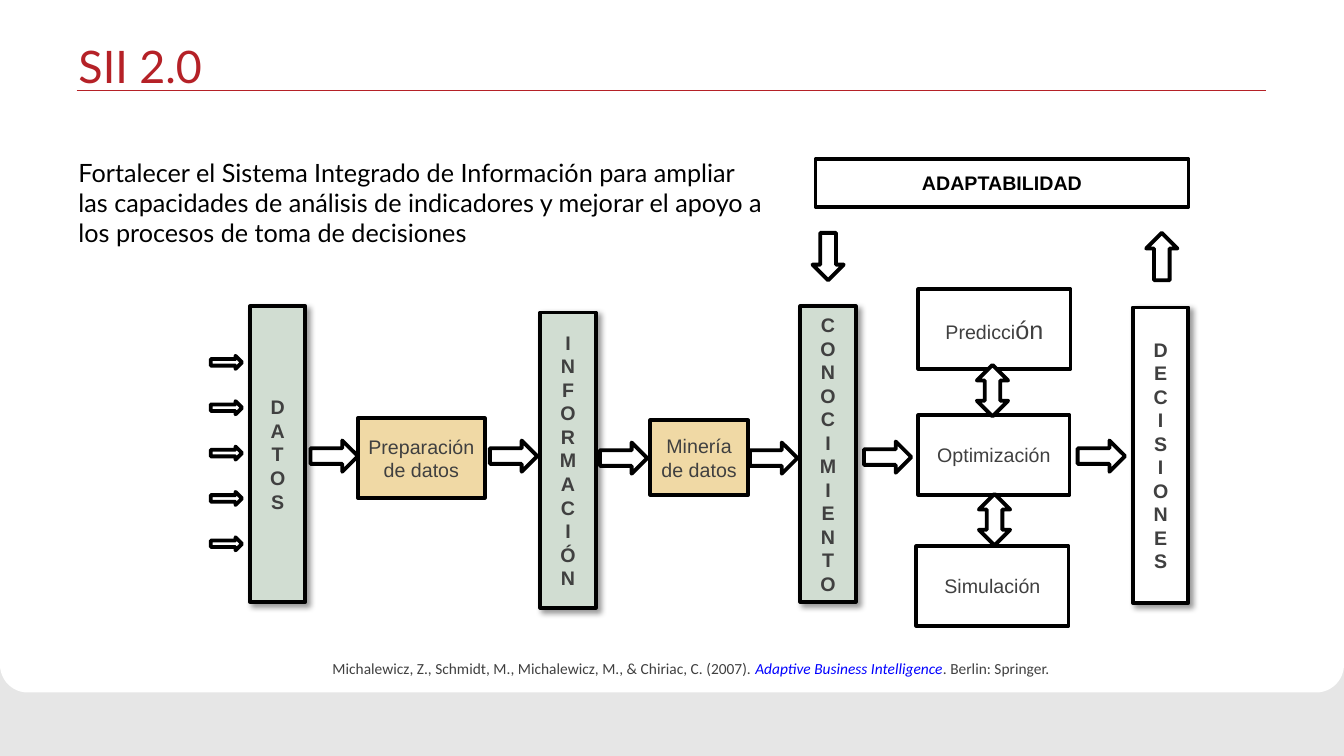
from lxml import etree
from pptx import Presentation
from pptx.dml.color import RGBColor
from pptx.enum.shapes import MSO_CONNECTOR as Connector, MSO_SHAPE as Shape
from pptx.enum.text import MSO_ANCHOR as Anchor, PP_ALIGN as Align
from pptx.oxml import parse_xml
from pptx.oxml.ns import nsdecls, qn
from pptx.util import Inches, Pt

RED, BLACK, WHITE, DARK = "B52127", "000000", "FFFFFF", "404040"
GREEN, SAND, GREY, BLUE = "D1DDD2", "F0D9A5", "E6E6E6", "0000FF"

presentation = Presentation()
presentation.slide_width, presentation.slide_height = Inches(13.33), Inches(7.5)
slide = presentation.slides.add_slide(presentation.slide_layouts[6])


def color(hex_code):
    return RGBColor.from_string(hex_code)


def add_block(kind, left, top, width, height, fill=WHITE, line=BLACK, lines=(),
              size=14, font="Arial", ink=DARK, bold=False, align=Align.CENTER):
    """Place a shape, or a text box if kind is None, on a 100 by 100 grid."""
    column, row = presentation.slide_width / 100, presentation.slide_height / 100
    frame = [round(n) for n in (left * column, top * row, width * column, height * row)]
    if kind is None:
        shape = slide.shapes.add_textbox(*frame)
    else:
        shape = slide.shapes.add_shape(kind, *frame)
        shape.shadow.inherit = False
        if fill:
            shape.fill.solid()
            shape.fill.fore_color.rgb = color(fill)
        else:
            shape.fill.background()
        if line:
            shape.line.color.rgb = color(line)
            shape.line.width = Pt(2.75)
        else:
            shape.line.fill.background()
        shape.text_frame.vertical_anchor = Anchor.MIDDLE
    if lines:
        shape.text_frame.word_wrap = True
        shape.text_frame.text = "\n".join(lines)
        for paragraph in shape.text_frame.paragraphs:
            paragraph.alignment = align
            paragraph.font.size = Pt(size)
            paragraph.font.name = font
            paragraph.font.bold = bold
            paragraph.font.color.rgb = color(ink)
    return shape


# Background, title and rule
add_block(Shape.RECTANGLE, 0, 0, 100, 100, GREY, None)
panel = add_block(Shape.ROUND_2_SAME_RECTANGLE, 0, 0, 100, 91.6, WHITE, None)
panel.adjustments[0], panel.adjustments[1] = 0, 0.04

rule_y = round(presentation.slide_height * 0.12)
rule = slide.shapes.add_connector(
    Connector.STRAIGHT, round(presentation.slide_width * 0.057), rule_y,
    round(presentation.slide_width * 0.942), rule_y)
rule.line.color.rgb = color(RED)
rule.line.width = Pt(0.48)
etree.SubElement(rule._element.spPr, qn("a:effectLst"))

title = add_block(None, 5.1, 1.33, 86.25, 15.6, lines=["SII 2.0"], size=32,
                  font="Lato", ink=RED, align=Align.LEFT)
title.text_frame.vertical_anchor = Anchor.MIDDLE
title.text_frame.paragraphs[0].line_spacing = 0.9

add_block(None, 5.1, 20.13, 52.73, 13.47, size=18, font="Lato", ink=BLACK,
          align=Align.LEFT, lines=[
              "Fortalecer el Sistema Integrado de Información para ampliar las "
              "capacidades de análisis de indicadores y mejorar el apoyo a los "
              "procesos de toma de decisiones"])

# Stage bars, one letter to a line, with a soft shadow
for word, left, top, fill in [("DATOS", 18.6, 40.53, GREEN),
                              ("INFORMACIÓN", 40.2, 41.33, GREEN),
                              ("CONOCIMIENTO", 59.55, 40.53, GREEN),
                              ("DECISIONES", 84.3, 40.67, WHITE)]:
    bar = add_block(Shape.RECTANGLE, left, top, 4.13, 39.07, fill,
                    lines=list(word), bold=True)
    effects = bar._element.spPr.find(qn("a:effectLst"))
    effects.append(parse_xml(
        f'<a:outerShdw {nsdecls("a")} blurRad="{Pt(4)}" dist="{Pt(3)}" dir="2700000" '
        'algn="tl" rotWithShape="0"><a:srgbClr val="000000"><a:alpha val="40000"/>'
        '</a:srgbClr></a:outerShdw>'))

# Process and model boxes
for label, left, top, width, height, fill in [
        ("Preparación de datos", 26.63, 55.33, 9.45, 10.53, SAND),
        ("Minería de datos", 48.38, 55.6, 7.28, 9.87, SAND),
        ("Optimización", 68.33, 54.93, 11.25, 10.53, WHITE),
        ("Simulación", 68.18, 72.27, 11.33, 10.53, WHITE)]:
    add_block(Shape.RECTANGLE, left, top, width, height, fill, lines=[label])

prediction = add_block(Shape.RECTANGLE, 68.33, 38.27, 11.33, 10.53, lines=["Predicci"])
ending = prediction.text_frame.paragraphs[0].add_run()
ending.text = "ón"
ending.font.size = Pt(18)

add_block(Shape.RECTANGLE, 60.68, 21.07, 27.75, 6.27, None,
          lines=["ADAPTABILIDAD"], ink=BLACK, bold=True)

# Arrows between stages, to and from adaptability, and between models
for left, top, turn in [(23.1, 58.27, 0), (36.45, 58.27, 0), (44.63, 58.53, 0),
                        (55.8, 58.53, 0), (64.28, 58.4, 0), (80.18, 58.27, 0),
                        (59.85, 31.87, 90), (84.68, 31.87, 270)]:
    add_block(Shape.RIGHT_ARROW, left, top, 3.53, 4.13).rotation = turn
for left, top in [(71.93, 49.6), (72.08, 66.67)]:
    add_block(Shape.LEFT_RIGHT_ARROW, left, top, 3.83, 4.13).rotation = 90

# Data inputs
for index in range(5):
    add_block(Shape.RIGHT_ARROW, 15.68, 47.07 + 6 * index, 2.33, 1.73)

# Reference
reference = add_block(
    None, 23.18, 86.53, 55.65, 3.87, size=11, font="Calibri", align=Align.RIGHT,
    lines=["Michalewicz, Z., Schmidt, M., Michalewicz, M., & Chiriac, C. (2007). "])
citation = reference.text_frame.paragraphs[0]
book = citation.add_run()
book.text = "Adaptive Business Intelligence"
book.font.italic = True
book.font.color.rgb = color(BLUE)
citation.add_run().text = ". Berlin: Springer."

presentation.save("out.pptx")
